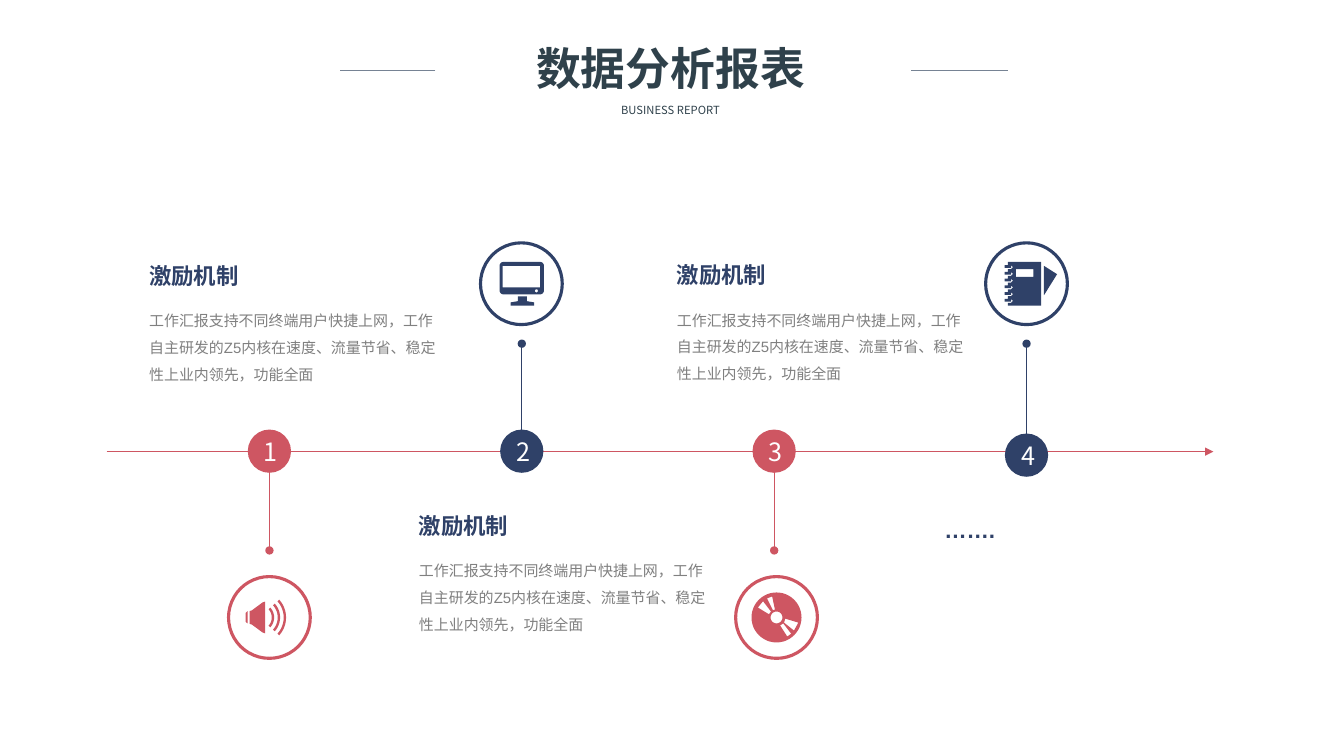
from math import cos, radians, sin

from lxml.etree import SubElement
from pptx import Presentation
from pptx.dml.color import RGBColor
from pptx.enum.shapes import MSO_CONNECTOR, MSO_SHAPE
from pptx.enum.text import MSO_ANCHOR, MSO_AUTO_SIZE, PP_ALIGN
from pptx.oxml.ns import qn
from pptx.util import Cm, Pt

COLORS = {"red": "CE5662", "navy": "2F4168", "slate": "2F414B",
          "rule": "768394", "gray": "808080", "white": "FFFFFF"}
NOTO = "Noto Sans CJK SC"
FORMATS = {
    "title": {"size": Pt(32), "bold": True, "name": NOTO},
    "subtitle": {"size": Pt(8), "name": NOTO},
    "number": {"size": Pt(18), "name": NOTO},
    "heading": {"size": Pt(16), "bold": True, "name": "Arial"},
    "body": {"size": Pt(10.7), "name": "Arial"},
}
INKS = {"title": "slate", "subtitle": "slate", "number": "white",
        "heading": "navy", "body": "gray"}

TITLE = ("数据分析报表", 11.68, 0.89, 10.44, 1.63)
SUBTITLE = ("BUSINESS REPORT", 14.88, 2.49, 4.04, 0.61)
TITLE_RULES = [(10.97, 8.56), (25.4, 22.96)]
HEADING = "激励机制"
BODY = "工作汇报支持不同终端用户快捷上网，工作自主研发的Z5内核在速度、流量节省、稳定性上业内领先，功能全面"
CAPTIONS = [(HEADING, BODY, 3.51, 6.48), (HEADING, BODY, 10.31, 12.78),
            (HEADING, BODY, 16.81, 6.46), ("…….", "", 23.55, 12.88)]
STATIONS = [("1", "red", "speaker", 6.79, 11.37), ("2", "navy", "monitor", 13.14, 11.37),
            ("3", "red", "disc", 19.57, 11.37), ("4", "navy", "notebook", 25.87, 11.47)]
SIDES = {"red": {"stem": (11.38, 13.87), "icon": 15.56},
         "navy": {"stem": (8.66, 11.18), "icon": 7.15}}
FIRST_STATION, STATION_STEP = 6.79, 6.36
AXIS_START, AXIS_END, AXIS_Y = 2.69, 30.58, 11.38
BADGE, RING = 1.09, 2.06


def arc(x, y, radius, start, end, steps=12):
    angles = [radians(start + (end - start) * i / steps) for i in range(steps + 1)]
    return [(x + radius * cos(a), y + radius * sin(a)) for a in angles]


def box(left, top, right, bottom):
    return [(left, top), (right, top), (right, bottom), (left, bottom)]


def rounded_box(left, top, right, bottom, radius):
    corners = box(left + radius, top + radius, right - radius, bottom - radius)
    return [point for i, (x, y) in enumerate(corners)
            for point in arc(x, y, radius, 180 + 90 * i, 270 + 90 * i, 4)]


def sound_wave(radius):
    return arc(-0.25, 0, radius, -42, 42) + arc(-0.25, 0, radius - 0.06, 42, -42)


def binding():
    tooth = [(-0.47, 0), (-0.55, 0), (-0.55, 0.07), (-0.39, 0.07),
             (-0.39, 0), (-0.34, 0.05), (-0.39, 0.1), (-0.47, 0.1)]
    return [(x, y - 0.47 + 0.17 * i) for i in range(6) for x, y in tooth]


ICONS = {
    "speaker": [[
        [(-0.17, -0.38), (-0.44, -0.18), (-0.5, -0.16), (-0.5, 0.16),
         (-0.44, 0.18), (-0.17, 0.38), (-0.11, 0.4), (-0.11, -0.4)]],
        [[(-0.6, -0.11), (-0.55, -0.16), (-0.55, 0.15), (-0.6, 0.11)]],
        *[[sound_wave(radius)] for radius in (0.37, 0.52, 0.67)]],
    "monitor": [[
        rounded_box(-0.55, -0.55, 0.57, 0.27, 0.1),
        [(-0.27, 0.47), (-0.09, 0.44), (-0.09, 0.32), (0.14, 0.32),
         (0.14, 0.44), (0.32, 0.47), (0.32, 0.55), (-0.27, 0.55)],
        box(-0.47, -0.45, 0.47, 0.09),
        arc(0.38, 0.18, 0.04, 0, 360)]],
    "disc": [[
        arc(0, 0, 0.63, 0, 360, 48),
        arc(0, 0, 0.15, 0, 360, 24),
        [(-0.09, -0.18), (-0.04, -0.2), (-0.11, -0.53), (-0.24, -0.48)],
        [(0.17, 0.15), (0.09, 0.2), (0.27, 0.48), (0.37, 0.41)],
        [(0.55, 0.13), (0.22, 0.03), (0.19, 0.13), (0.44, 0.33)],
        [(-0.47, -0.25), (-0.19, -0.08), (-0.14, -0.15), (-0.34, -0.41)]]],
    "notebook": [[
        [(0.44, -0.45), (0.44, 0.29), (0.77, -0.24)],
        [(-0.47, -0.55), *binding(), (-0.47, 0.55), (0.37, 0.55), (0.37, -0.55)],
        box(-0.27, -0.37, 0.17, -0.17)]],
}

prs = Presentation()
prs.slide_width, prs.slide_height = Cm(33.87), Cm(19.05)
shapes = prs.slides.add_slide(prs.slide_layouts[6]).shapes


def rgb(color):
    return RGBColor.from_string(COLORS[color])


def write(frame, text, style, align=PP_ALIGN.LEFT, spacing=None):
    paragraph = frame.paragraphs[0]
    paragraph.alignment, paragraph.line_spacing = align, spacing
    run = paragraph.add_run()
    run.text = text
    for attribute, value in FORMATS[style].items():
        setattr(run.font, attribute, value)
    run.font.color.rgb = rgb(INKS[style])
    SubElement(run.font._element, qn("a:ea"), typeface=NOTO)


def add_text(text, left, top, width, height, style, **layout):
    frame = shapes.add_textbox(Cm(left), Cm(top), Cm(width), Cm(height)).text_frame
    frame.word_wrap = True
    frame.auto_size = MSO_AUTO_SIZE.SHAPE_TO_FIT_TEXT
    write(frame, text, style, **layout)


def add_line(x1, y1, x2, y2, color, **ends):
    line = shapes.add_connector(MSO_CONNECTOR.STRAIGHT, Cm(x1), Cm(y1), Cm(x2), Cm(y2))
    line.line.color.rgb, line.line.width = rgb(color), Pt(0.5)
    for end, kind in ends.items():
        SubElement(line.line._get_or_add_ln(), qn(f"a:{end}"), type=kind)
    SubElement(line._element.spPr, qn("a:effectLst"))


def paint(shape, color):
    shape.shadow.inherit = False
    shape.fill.solid()
    shape.fill.fore_color.rgb = rgb(color)
    shape.line.fill.background()


def add_circle(x, y, size):
    return shapes.add_shape(MSO_SHAPE.OVAL, Cm(x - size / 2), Cm(y - size / 2), Cm(size), Cm(size))


def add_badge(number, x, y, color):
    badge = add_circle(x, y, BADGE)
    paint(badge, color)
    badge.text_frame.vertical_anchor = MSO_ANCHOR.MIDDLE
    write(badge.text_frame, number, "number", PP_ALIGN.CENTER)


def add_ring(x, y, color):
    ring = add_circle(x, y, RING)
    ring.shadow.inherit = False
    ring.fill.background()
    ring.line.color.rgb, ring.line.width = rgb(color), Pt(2.25)


def add_icon(icon, x, y, color):
    for contours in ICONS[icon]:
        outlines = [[(Cm(x + dx), Cm(y + dy)) for dx, dy in contour] for contour in contours]
        builder = shapes.build_freeform(*outlines[0][0])
        for i, outline in enumerate(outlines):
            if i:
                builder.move_to(*outline[0])
            builder.add_line_segments(outline[1:], close=True)
        paint(builder.convert_to_shape(), color)


for i, (_, color, *_) in enumerate(STATIONS):
    station_x = FIRST_STATION + i * STATION_STEP
    stem_top, stem_bottom = SIDES[color]["stem"]
    add_line(station_x, stem_top, station_x, stem_bottom, color, headEnd="oval", tailEnd="oval")
add_line(AXIS_START, AXIS_Y, AXIS_END, AXIS_Y, "red", tailEnd="triangle")

for i, (number, color, icon, icon_x, badge_y) in enumerate(STATIONS):
    add_badge(number, FIRST_STATION + i * STATION_STEP, badge_y, color)
    add_ring(icon_x, SIDES[color]["icon"], color)
    add_icon(icon, icon_x, SIDES[color]["icon"], color)

for heading, body, left, top in CAPTIONS:
    add_text(heading, left, top, 7.04, 0.94, "heading")
    if body:
        add_text(body, left, top + 1.03, 7.85, 2.31, "body", spacing=1.5)

add_text(*SUBTITLE, "subtitle", align=PP_ALIGN.CENTER)
add_text(*TITLE, "title", align=PP_ALIGN.CENTER)
for rule_start, rule_end in TITLE_RULES:
    add_line(rule_start, 1.78, rule_end, 1.78, "rule")

prs.save("out.pptx")
